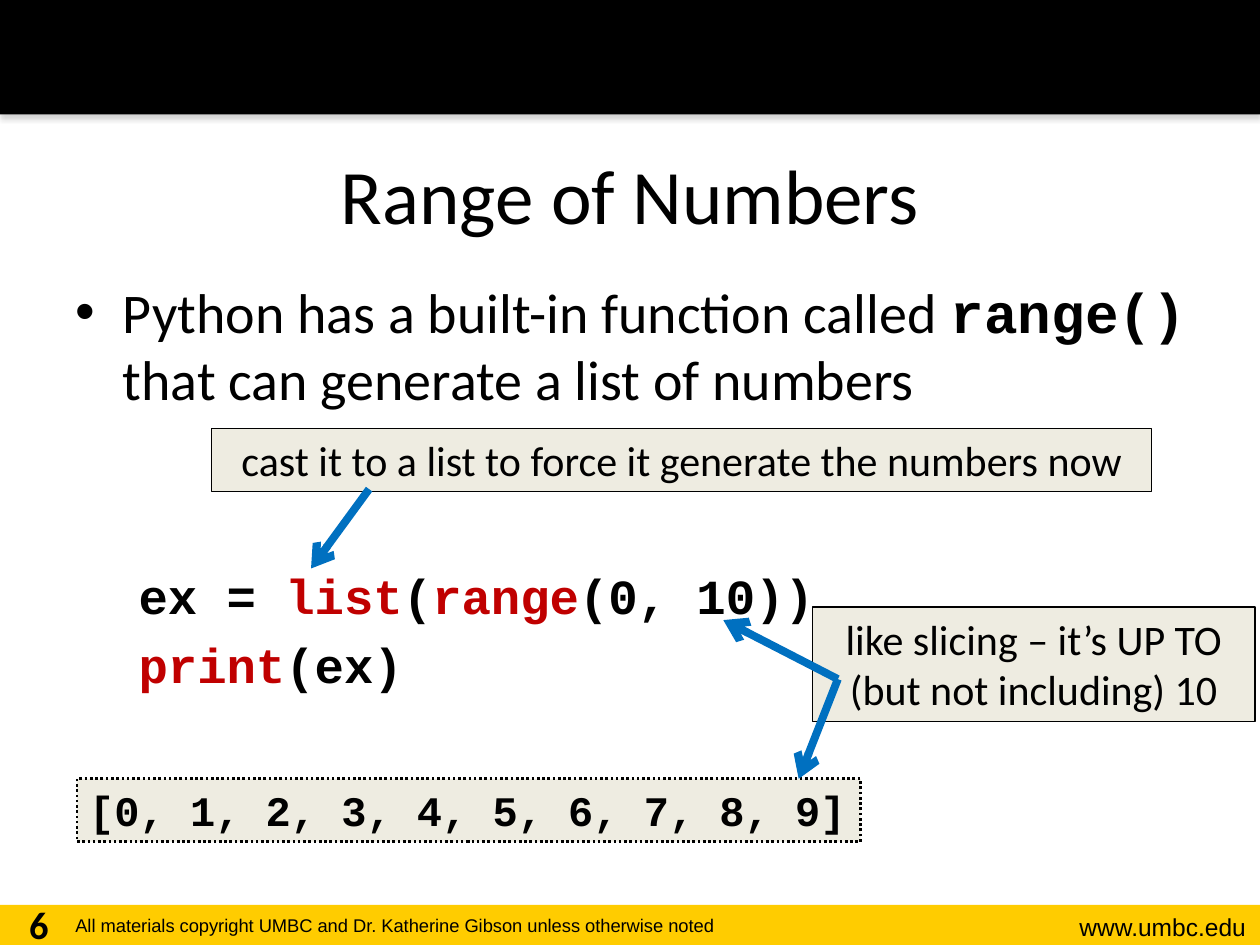
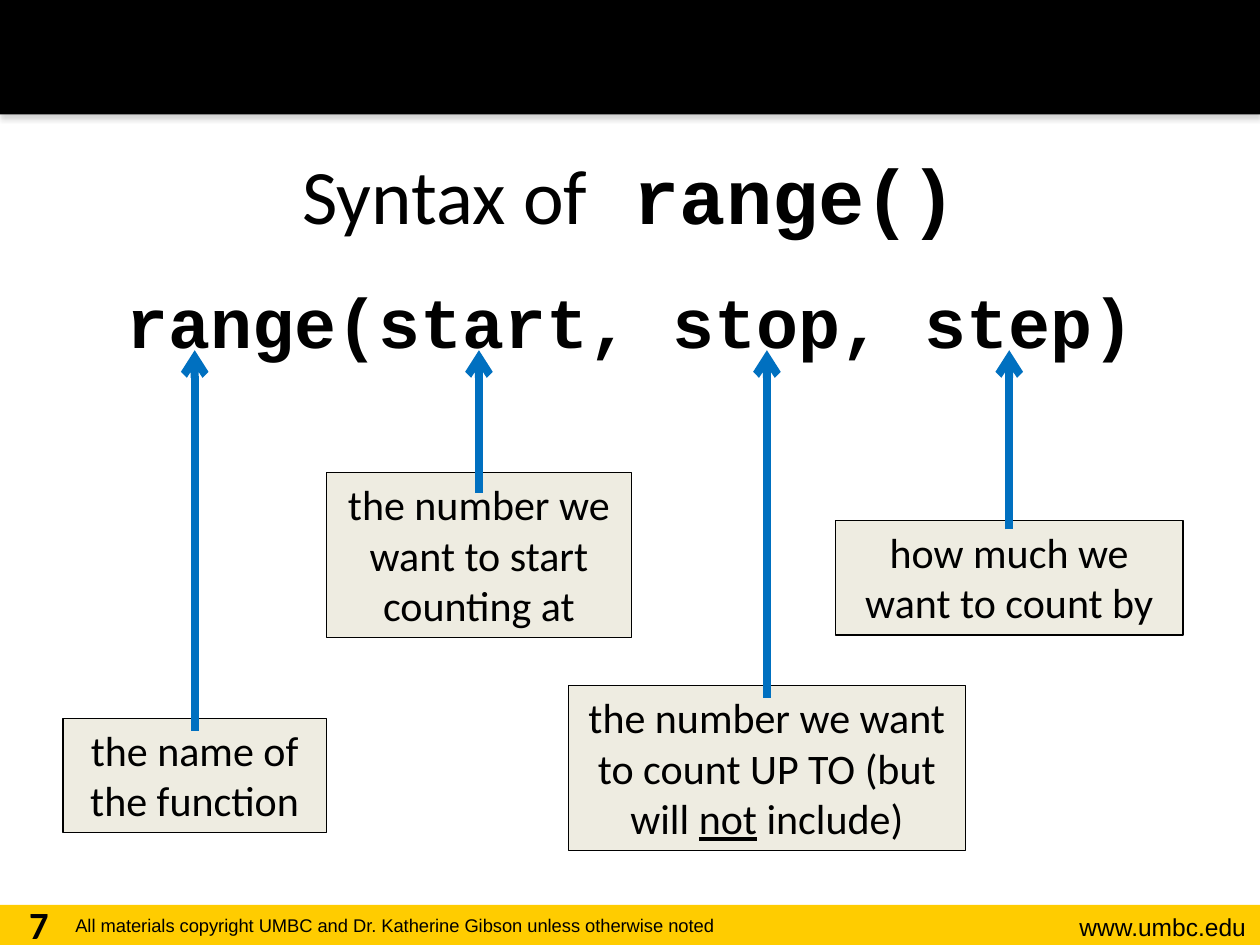
from lxml.etree import SubElement
from pptx import Presentation
from pptx.dml.color import RGBColor
from pptx.enum.dml import MSO_LINE
from pptx.enum.shapes import MSO_CONNECTOR, MSO_SHAPE
from pptx.enum.text import MSO_ANCHOR as Anchor, MSO_AUTO_SIZE as AutoSize, PP_ALIGN as Align
from pptx.oxml.ns import qn
from pptx.util import Cm, Pt

BLACK = RGBColor(0x00, 0x00, 0x00)
GOLD = RGBColor(0xFF, 0xCC, 0x00)
CREAM = RGBColor(0xEE, 0xEC, 0xE1)
BLUE = RGBColor(0x00, 0x70, 0xC0)
RED = RGBColor(0xC0, 0x00, 0x00)
CODE = dict(font="Courier New", bold=True)
KEYWORD = dict(CODE, color=RED)

WIDTH, HEIGHT = 25.4, 19.05
HEADER_HEIGHT, FOOTER_TOP = 2.31, 18.24
TITLE_AREA = (1.27, HEADER_HEIGHT, 22.86, 3.18)
WEBSITE = "www.umbc.edu"
COPYRIGHT = "All materials copyright UMBC and Dr. Katherine Gibson unless otherwise noted"

NUMBERS_TITLE = ["Range of Numbers"]
NUMBERS_AREA = (1.27, 5.46, 23.37, 11.56)
NUMBERS_INTRO = ["Python has a built-in function called ", ("range()", CODE),
                 " that can generate a list of numbers"]
EXAMPLE = [
    [("ex = ", CODE), ("list", KEYWORD), ("(", CODE), ("range", KEYWORD), ("(0, 10))", CODE)],
    [("print", KEYWORD), ("(ex)", CODE)],
]
EXAMPLE_GAP = 88
RESULT = [("[0, 1, 2, 3, 4, 5, 6, 7, 8, 9]", CODE)]
RESULT_AREA = (1.55, 15.7, 15.8, 1.27)
HINTS = [
    ("cast it to a list to force it generate the numbers now", (4.27, 8.64, 18.95, 1.27),
     (7.44, 9.86), [(6.27, 11.46)]),
    ("like slicing – it’s UP TO (but not including) 10", (16.38, 12.24, 8.92, 2.31),
     (16.89, 13.69), [(14.58, 12.5), (16.1, 15.7)]),
]

SYNTAX_TITLE = ["Syntax of", (" range()", CODE)]
SYNTAX_AREA = (1.27, 5.49, 22.86, 12.55)
SYNTAX = [("range(start, stop, step)", CODE)]
SYNTAX_BOTTOM = 7.06
PARTS = [
    (["the name of the function"], (1.27, 14.48, 5.31, 2.31), 14.73),
    (["the number we want to start counting at"], (6.58, 9.53, 6.15, 3.33), 9.93),
    (["the number we want to count UP TO (but will ", ("not", dict(underline=True)), " include)"],
     (11.46, 13.82, 8, 3.33), 14.07),
    (["how much we want to count by"], (16.84, 10.49, 7.01, 2.31), 10.67),
]


def write(paragraph, pieces, size=24, font="Calibri", color=BLACK, bold=False,
          underline=False, align=None):
    if align is not None:
        paragraph.alignment = align
    base = dict(font=font, color=color, bold=bold, underline=underline)
    for piece in pieces:
        text, changes = (piece, {}) if isinstance(piece, str) else piece
        style = {**base, **changes}
        run = paragraph.add_run()
        run.text = text
        run.font.size = Pt(size)
        run.font.name = style["font"]
        run.font.color.rgb = style["color"]
        run.font.bold = style["bold"]
        run.font.underline = style["underline"]


def place(placeholder, area):
    placeholder.left, placeholder.top, placeholder.width, placeholder.height = map(Cm, area)
    placeholder.text_frame.auto_size = AutoSize.NONE
    return placeholder.text_frame


def remove_bullet(paragraph, margin=0):
    properties = paragraph._p.get_or_add_pPr()
    properties.set("marL", str(Cm(margin)))
    properties.set("indent", "0")
    SubElement(properties, qn("a:buNone"))


def add_rectangle(slide, area, fill):
    rectangle = slide.shapes.add_shape(MSO_SHAPE.RECTANGLE, *map(Cm, area))
    rectangle.shadow.inherit = False
    rectangle.fill.solid()
    rectangle.fill.fore_color.rgb = fill
    rectangle.line.fill.background()
    return rectangle


def add_header(slide):
    header = add_rectangle(slide, (0, 0, WIDTH, HEADER_HEIGHT), BLACK)
    effects = header._element.spPr.find(qn("a:effectLst"))
    shadow = SubElement(effects, qn("a:outerShdw"), blurRad=str(Pt(3.1)), dist=str(Pt(1.8)),
                        dir="5400000", rotWithShape="0")
    tint = SubElement(shadow, qn("a:srgbClr"), val="808080")
    SubElement(tint, qn("a:alpha"), val="35000")


def add_label(slide, text, area, **style):
    frame = slide.shapes.add_textbox(*map(Cm, area)).text_frame
    frame.word_wrap = True
    write(frame.paragraphs[0], [text], **style)


def add_note(slide, pieces, area, line_width=0.75, dash=None, align=Align.CENTER):
    note = add_rectangle(slide, area, CREAM)
    note.line.color.rgb = BLACK
    note.line.width = Pt(line_width)
    if dash is not None:
        note.line.dash_style = dash
    frame = note.text_frame
    frame.word_wrap = True
    frame.auto_size = AutoSize.SHAPE_TO_FIT_TEXT
    frame.vertical_anchor = Anchor.TOP
    write(frame.paragraphs[0], pieces, align=align)


def add_arrow(slide, start, tip):
    arrow = slide.shapes.add_connector(MSO_CONNECTOR.STRAIGHT, *map(Cm, start + tip))
    arrow.line.color.rgb = BLUE
    arrow.line.width = Pt(4.5)
    properties = arrow._element.spPr
    SubElement(properties.find(qn("a:ln")), qn("a:tailEnd"), type="arrow")
    SubElement(properties, qn("a:effectLst"))


def add_slide(deck, number, title, body_area):
    slide = deck.slides.add_slide(deck.slide_layouts[1])
    add_rectangle(slide, (0, FOOTER_TOP, WIDTH, HEIGHT - FOOTER_TOP), GOLD)
    add_header(slide)
    add_label(slide, WEBSITE, (20.32, 18.26, 5.05, 0.86), size=14, font="Arial", align=Align.RIGHT)
    add_label(slide, COPYRIGHT, (1.27, 18.31, 16.66, 0.74), size=10.5, font="Arial")
    add_label(slide, str(number), (0, 18.03, 1.57, 1.02), size=22, bold=True, align=Align.CENTER)
    title_frame = place(slide.shapes.title, TITLE_AREA)
    title_frame.vertical_anchor = Anchor.MIDDLE
    write(title_frame.paragraphs[0], title, size=44, align=Align.CENTER)
    body = place(slide.placeholders[1], body_area)
    body.paragraphs[0].space_before = Pt(0)
    return slide, body


def build_numbers(deck):
    slide, body = add_slide(deck, 6, NUMBERS_TITLE, NUMBERS_AREA)
    write(body.paragraphs[0], NUMBERS_INTRO, size=32)
    for index, statement in enumerate(EXAMPLE):
        paragraph = body.add_paragraph()
        paragraph.level = 1
        remove_bullet(paragraph, margin=1.27)
        if index == 0:
            paragraph.space_before = Pt(EXAMPLE_GAP)
        write(paragraph, statement, size=28)
    add_note(slide, RESULT, RESULT_AREA, line_width=1.5, dash=MSO_LINE.ROUND_DOT, align=Align.LEFT)
    for hint, area, start, tips in HINTS:
        add_note(slide, [hint], area)
        for tip in tips:
            add_arrow(slide, start, tip)


def build_syntax(deck):
    slide, body = add_slide(deck, 7, SYNTAX_TITLE, SYNTAX_AREA)
    remove_bullet(body.paragraphs[0])
    write(body.paragraphs[0], SYNTAX, size=40, align=Align.CENTER)
    for meaning, area, arrow_start in PARTS:
        add_note(slide, meaning, area)
        center = area[0] + area[2] / 2
        add_arrow(slide, (center, arrow_start), (center, SYNTAX_BOTTOM))


def main():
    deck = Presentation()
    deck.slide_width, deck.slide_height = Cm(WIDTH), Cm(HEIGHT)
    build_numbers(deck)
    build_syntax(deck)
    deck.save("out.pptx")


if __name__ == "__main__":
    main()
